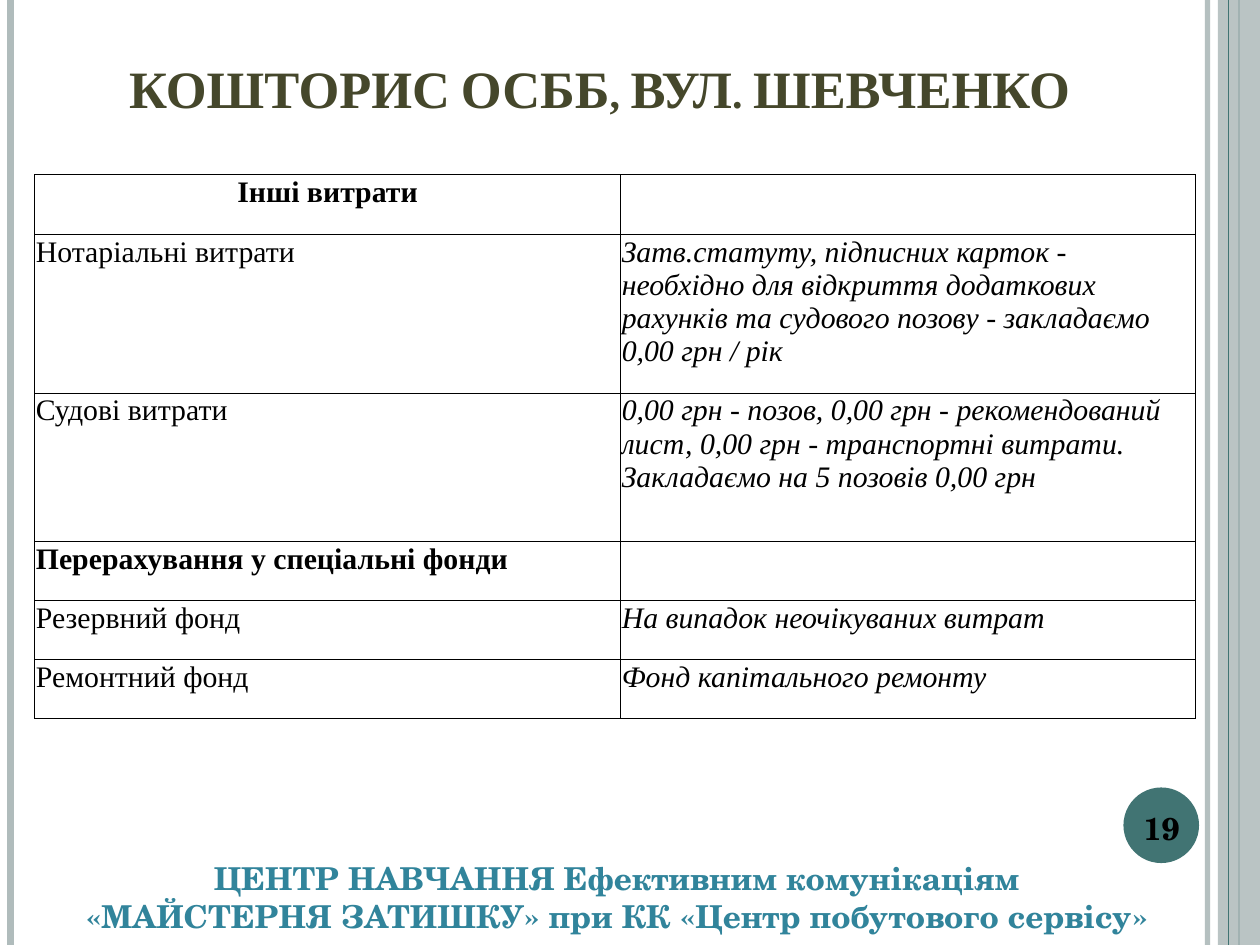
from pptx import Presentation
from pptx.dml.color import RGBColor
from pptx.enum.shapes import MSO_CONNECTOR as Line, MSO_SHAPE as Shape
from pptx.enum.text import MSO_ANCHOR as Anchor, PP_ALIGN as Align
from pptx.oxml import parse_xml
from pptx.oxml.ns import nsdecls, qn
from pptx.util import Pt

GREY = RGBColor(0xB0, 0xBC, 0xBC)
TEAL = RGBColor(0x41, 0x74, 0x73)
OLIVE = RGBColor(0x45, 0x47, 0x2B)
BLUE = RGBColor(0x31, 0x84, 0x9B)
BLACK = RGBColor(0, 0, 0)
SERIF = "Times New Roman"
SCHOOL = "TeX Gyre Schola"
WIDE, HIGH = 720, 540

# Left text, right text, row height; a row without right text is a heading
ROWS = [
    ("Інші витрати", "", 34),
    ("Нотаріальні витрати",
     "Затв.статуту, підписних карток - необхідно для відкриття додаткових "
     "рахунків та судового позову - закладаємо 0,00 грн / рік", 90.8),
    ("Судові витрати",
     "0,00 грн - позов, 0,00 грн - рекомендований лист, 0,00 грн - "
     "транспортні витрати. Закладаємо на 5 позовів 0,00 грн", 84.8),
    ("Перерахування у спеціальні фонди", "", 33.8),
    ("Резервний фонд", "На випадок неочікуваних витрат", 33.8),
    ("Ремонтний фонд", "Фонд капітального ремонту", 33.8),
]


class Page:
    def __init__(self, slide):
        self.slide = slide
        self.shapes = slide.shapes

    def fade(self, fill, alpha):
        color = fill.find(".//" + qn("a:srgbClr"))
        color.append(parse_xml(
            f'<a:alpha {nsdecls("a")} val="{alpha * 1000}"/>'))

    def rule(self, x, color, width, alpha=100):
        line = self.shapes.add_connector(
            Line.STRAIGHT, Pt(x), Pt(0), Pt(x), Pt(HIGH))
        line.line.color.rgb = color
        line.line.width = Pt(width)
        props = line._element.spPr
        if alpha < 100:
            self.fade(props, alpha)
        props.append(parse_xml(f'<a:effectLst {nsdecls("a")}/>'))

    def block(self, kind, box, color, alpha=100):
        shape = self.shapes.add_shape(kind, *map(Pt, box))
        shape.shadow.inherit = False
        shape.fill.solid()
        shape.fill.fore_color.rgb = color
        shape.line.fill.background()
        if alpha < 100:
            self.fade(shape._element.spPr, alpha)

    def style(self, para, face, size, color, bold=False, italic=False):
        font = para.font
        font.name, font.size = face, Pt(size)
        font.bold, font.italic = bold, italic
        font.color.rgb = color

    def text(self, box, lines, face, size, color, anchor=Anchor.TOP):
        frame = self.shapes.add_textbox(*map(Pt, box)).text_frame
        frame.word_wrap = True
        frame.vertical_anchor = anchor
        frame.text = "\n".join(lines)
        for para in frame.paragraphs:
            para.alignment = Align.CENTER
            self.style(para, face, size, color, bold=True)
        return frame

    def border(self, cell):
        props = cell._tc.get_or_add_tcPr()
        for place, side in enumerate(("lnL", "lnR", "lnT", "lnB")):
            props.insert(place, parse_xml(
                f'<a:{side} {nsdecls("a")} w="{Pt(0.5)}"><a:solidFill>'
                f'<a:srgbClr val="{BLACK}"/></a:solidFill></a:{side}>'))

    def table(self, left, top, cols, rows):
        high = sum(row[2] for row in rows)
        grid = self.shapes.add_table(
            len(rows), len(cols), Pt(left), Pt(top),
            Pt(sum(cols)), Pt(high)).table
        grid.first_row = grid.horz_banding = False
        for col, width in zip(grid.columns, cols):
            col.width = Pt(width)
        for r, (name, note, height) in enumerate(rows):
            grid.rows[r].height = Pt(height)
            for c, words in enumerate((name, note)):
                cell = grid.cell(r, c)
                cell.fill.background()
                self.border(cell)
                cell.margin_left = cell.margin_right = Pt(0.7)
                cell.margin_top, cell.margin_bottom = Pt(0.7), Pt(0)
                cell.text = words
                self.style(cell.text_frame.paragraphs[0], SERIF, 17, BLACK,
                           bold=not note, italic=c == 1)
        grid.cell(0, 0).text_frame.paragraphs[0].alignment = Align.CENTER


def main():
    deck = Presentation()
    deck.slide_width, deck.slide_height = Pt(WIDE), Pt(HIGH)
    page = Page(deck.slides.add_slide(deck.slide_layouts[6]))

    # Side stripes and number disc
    page.rule(690, GREY, 3, 93)
    page.rule(6, GREY, 4.5)
    page.rule(708, TEAL, 1.5)
    page.block(Shape.RECTANGLE, (696, 0, 24, HIGH), GREY, 87)
    page.rule(702, TEAL, 0.75)
    page.block(Shape.OVAL, (642, 450, 43.2, 43.2), TEAL)

    # Title
    title = page.text((36, 21.6, 613.4, 49.7),
                      ["КОШТОРИС ОСББ, ВУЛ. ШЕВЧЕНКО"],
                      SERIF, 30, OLIVE, Anchor.BOTTOM)
    title._txBody.find(".//" + qn("a:defRPr")).set("cap", "small")

    # Budget table
    page.table(19.8, 99.8, (334.8, 328.4), ROWS)

    # Footer and slide number
    page.text((9.4, 487.4, 686.2, 51),
              ["ЦЕНТР НАВЧАННЯ Ефективним комунікаціям",
               "«МАЙСТЕРНЯ ЗАТИШКУ» при КК «Центр побутового сервісу»"],
              SCHOOL, 18, BLUE)
    page.text((643.7, 458.6, 40.3, 29), ["19"], SCHOOL, 18, BLACK)

    deck.save("out.pptx")


if __name__ == "__main__":
    main()
